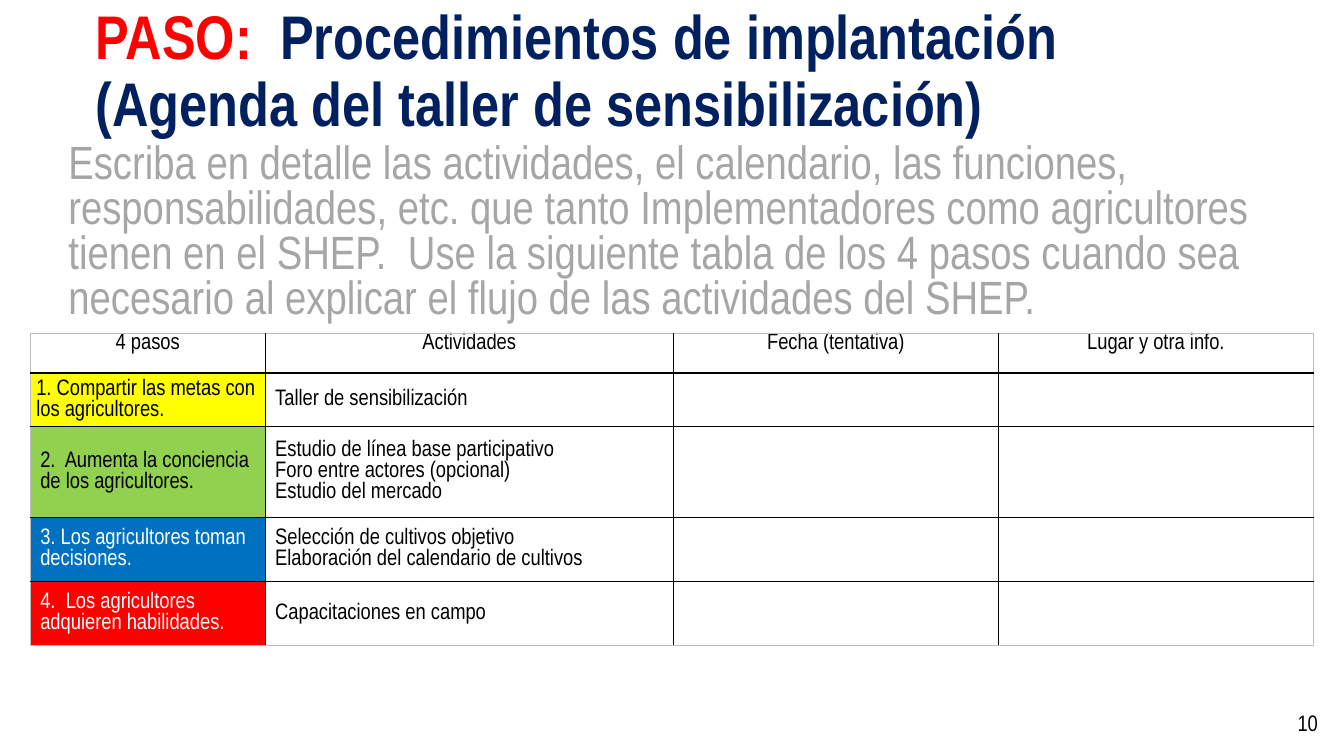
import pptx
import pptx.dml.color
import pptx.enum.text
import pptx.oxml
import pptx.oxml.ns
import pptx.util
from lxml import etree

Inches = pptx.util.Inches
Align = pptx.enum.text.PP_ALIGN
Anchor = pptx.enum.text.MSO_ANCHOR

FONT = "Arial Narrow"
BLACK, WHITE, GREY, NAVY, RED = "000000", "FFFFFF", "A6A6A6", "002060", "FF0000"
FRAME = "BFBFBF"

# Table grid, in inches
COLUMNS = [2.33, 4.05, 3.22, 3.13]
ROWS = [0.39, 0.47, 0.79, 0.55, 0.57]

HEADINGS = ["4 pasos", "Actividades", "Fecha (tentativa)", "Lugar y otra info."]
# Step, its fill, its text colour, its activities
STEPS = [
    ("1. Compartir las metas con los agricultores.", "FFFF00", BLACK,
     "Taller de sensibilización"),
    ("2.\N{NO-BREAK SPACE} Aumenta la conciencia de los agricultores.", "92D050", BLACK,
     "Estudio de línea base participativo\nForo entre actores (opcional)\nEstudio del mercado"),
    ("3. Los agricultores toman decisiones.", "0070C0", WHITE,
     "Selección de cultivos objetivo\nElaboración del calendario de cultivos"),
    ("4.\N{NO-BREAK SPACE} Los agricultores adquieren habilidades.", RED, WHITE,
     "Capacitaciones en campo"),
]
GUIDANCE = (
    "Escriba en detalle las actividades, el calendario, las funciones, "
    "responsabilidades, etc. que tanto Implementadores como agricultores tienen en el SHEP.  "
    "Use la siguiente tabla de los 4 pasos cuando sea necesario al explicar el flujo de las "
    "actividades del SHEP."
)


def rgb(code):
    return pptx.dml.color.RGBColor.from_string(code)


def style_font(font, size, color, bold=False):
    font.name = FONT
    font.size = pptx.util.Pt(size)
    font.bold = bold
    font.color.rgb = rgb(color)


def style_text(frame, size, color, align=Align.LEFT, spacing=1.0):
    for paragraph in frame.paragraphs:
        paragraph.alignment = align
        paragraph.line_spacing = spacing
        style_font(paragraph.font, size, color)
        for run in paragraph.runs:
            style_font(run.font, size, color)


def add_title(slide):
    title = slide.shapes.title
    title.left, title.top = Inches(0.85), 0
    title.width, title.height = Inches(11.86), Inches(1.45)
    frame = title.text_frame
    frame.word_wrap = True
    frame.auto_size = pptx.enum.text.MSO_AUTO_SIZE.NONE
    frame.vertical_anchor = Anchor.MIDDLE
    paragraph = frame.paragraphs[0]
    paragraph.alignment = Align.LEFT
    paragraph.line_spacing = 0.9
    for words, color in [
        ("PASO: ", RED),
        (" Procedimientos de implantación  (Agenda del taller de sensibilización)", NAVY),
    ]:
        run = paragraph.add_run()
        run.text = words
        style_font(run.font, 44, color, bold=True)


def add_text(slide, words, box, size, color, align=Align.LEFT, spacing=1.0, anchor=Anchor.TOP):
    frame = slide.shapes.add_textbox(*map(Inches, box)).text_frame
    frame.word_wrap = True
    frame.vertical_anchor = anchor
    frame.text = words
    style_text(frame, size, color, align, spacing)


def set_borders(cell, colors):
    properties = cell._tc.get_or_add_tcPr()
    for side, color in zip("LRTB", colors):
        line = etree.SubElement(properties, pptx.oxml.ns.qn("a:ln" + side), w="12700")
        fill = etree.SubElement(line, pptx.oxml.ns.qn("a:solidFill"))
        etree.SubElement(fill, pptx.oxml.ns.qn("a:srgbClr"), val=color)


def fill_cell(cell, words, color=BLACK, fill=None, align=Align.LEFT, anchor=Anchor.MIDDLE):
    cell.text = words
    cell.vertical_anchor = anchor
    style_text(cell.text_frame, 16, color, align)
    if fill:
        cell.fill.solid()
        cell.fill.fore_color.rgb = rgb(fill)
    else:
        cell.fill.background()


def tighten(cell):
    cell.margin_left = cell.margin_right = Inches(0.06)
    cell.margin_top = cell.margin_bottom = 0


def add_steps_table(slide):
    table = slide.shapes.add_table(
        len(ROWS), len(COLUMNS), Inches(0.3), Inches(3.31),
        Inches(sum(COLUMNS)), Inches(sum(ROWS))).table
    table.first_row = table.horz_banding = False
    for column, width in zip(table.columns, COLUMNS):
        column.width = Inches(width)
    for row, height in zip(table.rows, ROWS):
        row.height = Inches(height)

    # Grey outer frame, black inner rules
    last_row, last_column = len(ROWS) - 1, len(COLUMNS) - 1
    for r in range(len(ROWS)):
        for c in range(len(COLUMNS)):
            outer = (c == 0, c == last_column, r == 0, r == last_row)
            set_borders(table.cell(r, c), [FRAME if edge else BLACK for edge in outer])

    # Headings
    for c, heading in enumerate(HEADINGS):
        fill_cell(table.cell(0, c), heading, align=Align.CENTER, anchor=Anchor.TOP)
        tighten(table.cell(0, c))

    # Steps, with date and place left open
    for r, (step, fill, color, activities) in enumerate(STEPS, start=1):
        fill_cell(table.cell(r, 0), step, color, fill)
        fill_cell(table.cell(r, 1), activities)
        for c in (2, 3):
            fill_cell(table.cell(r, c), "")
    tighten(table.cell(1, 0))


def main():
    deck = pptx.Presentation()
    deck.slide_width, deck.slide_height = Inches(13.33), Inches(7.5)
    slide = deck.slides.add_slide(deck.slide_layouts[5])
    add_title(slide)
    add_text(slide, GUIDANCE, (0.58, 1.38, 12.45, 1.94), 33.3, GREY, spacing=0.8)
    add_text(slide, "10", (10.17, 6.97, 3, 0.4), 16, BLACK, Align.RIGHT, anchor=Anchor.MIDDLE)
    add_steps_table(slide)
    deck.save("out.pptx")


if __name__ == "__main__":
    main()
